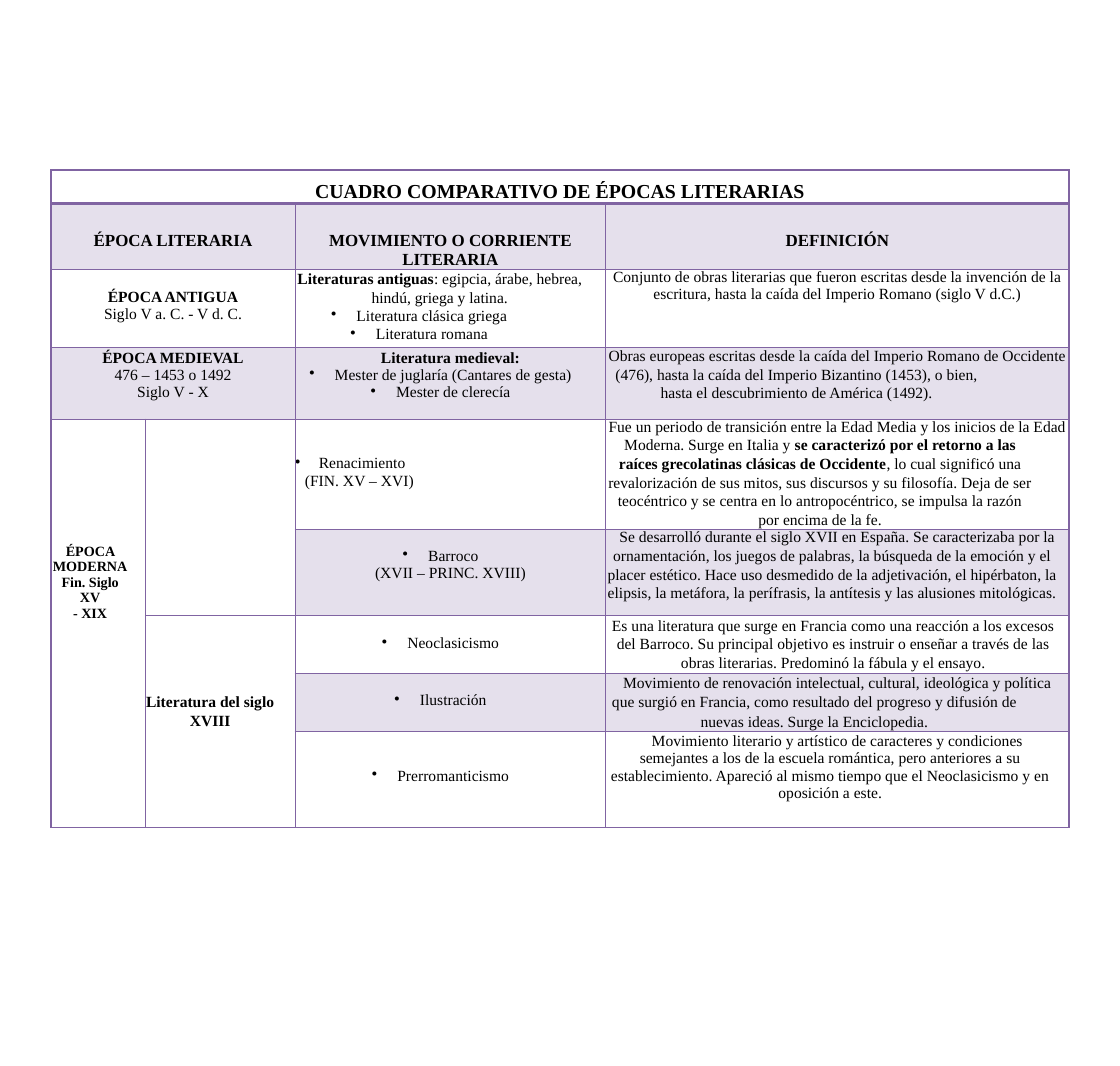
from dataclasses import dataclass
from typing import Optional, Union

from lxml import etree
from pptx import Presentation
from pptx.dml.color import RGBColor
from pptx.enum import text as t
from pptx.oxml import ns
from pptx.util import Inches, Pt

PURPLE = RGBColor(0x80, 0x64, 0xA2)
BLACK = RGBColor(0, 0, 0)
FONT = "Times New Roman"
TINT = 20  # percent opacity of shaded cells

COLS = (0.93, 1.47, 3.05, 4.55)
ROWS = (0.33, 0.64, 0.77, 0.7, 1.08, 0.85, 0.57, 0.57, 0.94)


@dataclass
class Para:
    text: str  # parts between asterisks are bold
    spacing: Union[float, Pt, None] = None
    right: float = 0
    size: float = 11
    tab: Optional[float] = None  # a tab stop makes the paragraph a bullet
    hang: float = 0.25


@dataclass
class Entry:
    row: int
    col: int
    paras: list[Para]
    top: float = 0
    shaded: bool = False
    rows: int = 1
    cols: int = 1


def header(col: int, *lines: str, cols: int = 1) -> Entry:
    paras = [Para(f"*{line}*", Pt(16.7) if i == 0 else None, size=12)
             for i, line in enumerate(lines)]
    return Entry(1, col, paras, top=0.23, shaded=True, cols=cols)


def bullet(text: str, tab: float = 0.33, **options) -> Para:
    return Para(text, tab=tab, **options)


ENTRIES = [
    # Title and column headings
    Entry(0, 0, [Para("*CUADRO COMPARATIVO DE ÉPOCAS LITERARIAS*", 1.5, size=14)], cols=4),
    header(0, "ÉPOCA LITERARIA", cols=2),
    header(2, "MOVIMIENTO O CORRIENTE", "LITERARIA"),
    header(3, "DEFINICIÓN"),
    # Antiquity
    Entry(2, 0, [Para("*ÉPOCA ANTIGUA*", Pt(12.8)),
                 Para("Siglo V a. C. - V d. C.")], top=0.18, cols=2),
    Entry(2, 2, [Para("*Literaturas antiguas*: egipcia, árabe, hebrea, hindú, griega y latina.",
                      Pt(13.3), right=0.21),
                 bullet("Literatura clásica griega", right=0.42),
                 bullet("Literatura romana", right=0.42, spacing=Pt(13.1))]),
    Entry(2, 3, [Para("Conjunto de obras literarias que fueron escritas desde la invención de la",
                      Pt(11.6)),
                 Para("escritura, hasta la caída del Imperio Romano (siglo V d.C.)")]),
    # Middle Ages
    Entry(3, 0, [Para("*ÉPOCA MEDIEVAL*", Pt(13.2)), Para("476 – 1453 o 1492"),
                 Para("Siglo V - X")], shaded=True, cols=2),
    Entry(3, 2, [Para("*Literatura medieval:*", Pt(13.2)),
                 bullet("Mester de juglaría (Cantares de gesta)"),
                 bullet("Mester de clerecía")], shaded=True),
    Entry(3, 3, [Para("Obras europeas escritas desde la caída del Imperio Romano de Occidente",
                      Pt(11.9)),
                 Para("(476), hasta la caída del Imperio Bizantino (1453), o bien, "
                      "hasta el descubrimiento de América (1492).", Pt(13.3), right=0.8)],
          shaded=True),
    # Modern age
    Entry(4, 0, [Para("*ÉPOCA MODERNA*", 1.01, right=0.16, size=10),
                 Para("*Fin. Siglo XV*", right=0.16, size=10),
                 Para("*- XIX*", right=0.16, size=10)], top=1.22, rows=5),
    Entry(4, 1, [], rows=2),
    Entry(4, 2, [bullet("Renacimiento (FIN. XV – XVI)", spacing=1.01, right=1.79, hang=0.29)],
          top=0.35),
    Entry(4, 3, [Para("Fue un periodo de transición entre la Edad Media y los inicios de la Edad",
                      Pt(11.6)),
                 Para("Moderna. Surge en Italia y *se caracterizó por el retorno a las raíces "
                      "grecolatinas clásicas de Occidente*, lo cual significó una revalorización "
                      "de sus mitos, sus discursos y su filosofía. Deja de ser teocéntrico y se "
                      "centra en lo antropocéntrico, se impulsa la razón por encima de la fe.",
                      1.08, right=0.34)]),
    Entry(5, 2, [bullet("Barroco"), Para("(XVII – PRINC. XVIII)")], top=0.18, shaded=True),
    Entry(5, 3, [Para("Se desarrolló durante el siglo XVII en España. Se caracterizaba por la",
                      Pt(11.9)),
                 Para("ornamentación, los juegos de palabras, la búsqueda de la emoción y el "
                      "placer estético. Hace uso desmedido de la adjetivación, el hipérbaton, la "
                      "elipsis, la metáfora, la perífrasis, la antítesis y las alusiones "
                      "mitológicas.", Pt(13.3), right=0.1)], shaded=True),
    # Eighteenth century
    Entry(6, 1, [Para("*Literatura del siglo XVIII*", 1.09, right=0.2)], top=0.75, rows=3),
    Entry(6, 2, [bullet("Neoclasicismo", 0.58)], top=0.19),
    Entry(6, 3, [Para("Es una literatura que surge en Francia como una reacción a los excesos "
                      "del Barroco. Su principal objetivo es instruir o enseñar a través de las "
                      "obras literarias. Predominó la fábula y el ensayo.", Pt(13.3), right=0.08)]),
    Entry(7, 2, [bullet("Ilustración", 0.58)], top=0.18, shaded=True),
    Entry(7, 3, [Para("Movimiento de renovación intelectual, cultural, ideológica y política",
                      Pt(12.8)),
                 Para("que surgió en Francia, como resultado del progreso y difusión de nuevas "
                      "ideas. Surge la Enciclopedia.", Pt(13.7), right=0.45)], shaded=True),
    Entry(8, 2, [bullet("Prerromanticismo", 0.58)], top=0.35),
    Entry(8, 3, [Para("Movimiento literario y artístico de caracteres y condiciones", Pt(12.8)),
                 Para("semejantes a los de la escuela romántica, pero anteriores a su "
                      "establecimiento. Apareció al mismo tiempo que el Neoclasicismo y en "
                      "oposición a este.", 1.01, right=0.14)]),
]


def add_xml(parent, tag: str, **attrs):
    return etree.SubElement(parent, ns.qn(tag), {k: str(v) for k, v in attrs.items()})


def set_borders(cell, bottom: float = 1) -> None:
    tcPr = cell._tc.get_or_add_tcPr()
    for side, width in (("L", 1), ("R", 1), ("T", 1), ("B", bottom)):
        ln = add_xml(tcPr, f"a:ln{side}", w=Pt(width))
        add_xml(add_xml(ln, "a:solidFill"), "a:srgbClr", val=PURPLE)


def write_para(p, para: Para) -> None:
    pPr = p._p.get_or_add_pPr()
    if para.tab is not None:
        pPr.set("marL", "0")
        pPr.set("indent", str(-Inches(para.hang)))
        add_xml(pPr, "a:buChar", char="•")
        add_xml(add_xml(pPr, "a:tabLst"), "a:tab", pos=Inches(para.tab), algn="l")
    pPr.set("marR", str(Inches(para.right)))
    p.alignment = t.PP_ALIGN.CENTER
    if para.spacing is not None:
        p.line_spacing = para.spacing
    for i, part in enumerate(para.text.split("*")):
        if part:
            r = p.add_run()
            r.text = part
            r.font.name, r.font.size = FONT, Pt(para.size)
            r.font.bold = i % 2 == 1
            r.font.color.rgb = BLACK


def write_entry(table, entry: Entry) -> None:
    cell = table.cell(entry.row, entry.col)
    if entry.rows * entry.cols > 1:
        cell.merge(table.cell(entry.row + entry.rows - 1, entry.col + entry.cols - 1))
    cell.margin_left = cell.margin_right = cell.margin_bottom = 0
    cell.margin_top = Inches(entry.top)
    if entry.shaded:
        cell.fill.solid()
        cell.fill.fore_color.rgb = PURPLE
        color = cell._tc.tcPr.find(ns.qn("a:solidFill"))[0]
        add_xml(color, "a:alpha", val=TINT * 1000)
    tf = cell.text_frame
    for i, para in enumerate(entry.paras):
        write_para(tf.add_paragraph() if i else tf.paragraphs[0], para)


def main() -> None:
    prs = Presentation()
    prs.slide_width, prs.slide_height = Inches(11), Inches(10.47)
    s = prs.slides.add_slide(prs.slide_layouts[6])

    # Grid
    table = s.shapes.add_table(len(ROWS), len(COLS), Inches(0.5), Inches(1.67),
                               Inches(sum(COLS)), Inches(sum(ROWS))).table
    table.first_row = table.horz_banding = False
    for column, width in zip(table.columns, COLS):
        column.width = Inches(width)
    for i, (row, height) in enumerate(zip(table.rows, ROWS)):
        row.height = Inches(height)
        for cell in row.cells:
            set_borders(cell, bottom=2 if i == 0 else 1)
            cell.fill.background()

    # Contents
    for entry in ENTRIES:
        write_entry(table, entry)
    prs.save("out.pptx")


if __name__ == "__main__":
    main()
